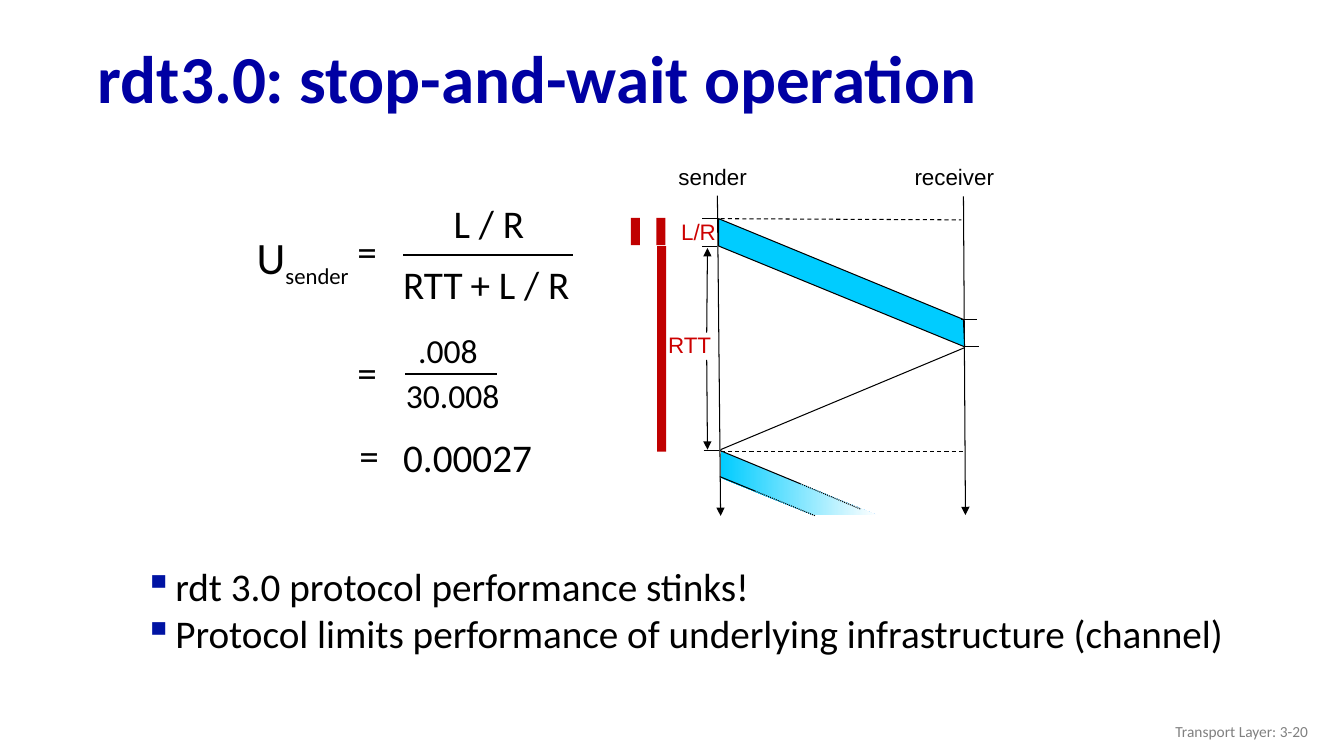
from pptx import Presentation, util as u
from pptx.dml.color import RGBColor
from pptx.enum import dml, shapes, text
from pptx.oxml import ns, xmlchemy

NAVY = RGBColor(0x00, 0x00, 0xA3)
BULLET_BLUE = RGBColor(0x00, 0x13, 0xA3)
BLACK = RGBColor(0x00, 0x00, 0x00)
WHITE = RGBColor(0xFF, 0xFF, 0xFF)
GREY = RGBColor(0x80, 0x80, 0x80)
CYAN = RGBColor(0x00, 0xCC, 0xFF)
LABEL_RED = RGBColor(0xCC, 0x00, 0x00)
BAR_RED = RGBColor(0xC0, 0x00, 0x00)
LEFT, RIGHT = text.PP_ALIGN.LEFT, text.PP_ALIGN.RIGHT
DASH, DOTS = dml.MSO_LINE.DASH, dml.MSO_LINE.ROUND_DOT

deck = Presentation()
deck.slide_width, deck.slide_height = u.Cm(33.87), u.Cm(19.05)
page = deck.slides.add_slide(deck.slide_layouts[5])


def add_line(x1, y1, x2, y2, weight=0.75, dash=None, arrow=False):
    """Draw a black line in cm, with an optional arrowhead at its end."""
    line = page.shapes.add_connector(
        shapes.MSO_CONNECTOR.STRAIGHT, *map(u.Cm, (x1, y1, x2, y2)))
    line.line.color.rgb = BLACK
    line.line.width = u.Pt(weight)
    if dash:
        line.line.dash_style = dash
    if arrow:
        head = xmlchemy.OxmlElement("a:tailEnd")
        head.set("type", "triangle")
        line.line._get_or_add_ln().append(head)
    line._element.spPr.append(xmlchemy.OxmlElement("a:effectLst"))


def add_text(place, lines, size, font="Calibri", color=BLACK, align=LEFT, wrap=True):
    """Add a text box at a place in cm, with one paragraph per line."""
    box = page.shapes.add_textbox(*map(u.Cm, place))
    box.text_frame.text = "\n".join(lines)
    box.text_frame.word_wrap = wrap
    for para in box.text_frame.paragraphs:
        para.alignment = align
        for span in para.runs:
            for name, value in {"size": u.Pt(size), "name": font}.items():
                setattr(span.font, name, value)
            span.font.color.rgb = color
    return box


# Title
title = page.shapes.title
for name, value in {"left": 2.21, "top": 0.81, "width": 30.84, "height": 2.49}.items():
    setattr(title, name, u.Cm(value))
title.text_frame.text = "rdt3.0: stop-and-wait operation"
title.text_frame.vertical_anchor = text.MSO_ANCHOR.MIDDLE
title_para = title.text_frame.paragraphs[0]
title_para.alignment = LEFT
title_para.line_spacing = 0.9
for name, value in {"size": u.Pt(48), "name": "Calibri", "bold": True}.items():
    setattr(title_para.runs[0].font, name, value)
title_para.runs[0].font.color.rgb = NAVY

# Time axes, exchange lines and marks
add_line(18.08, 4.93, 18.16, 13, arrow=True)
add_line(24.28, 4.95, 24.33, 12.98, arrow=True)
add_line(18.16, 5.51, 24.23, 5.54, dash=DASH)
add_line(18.16, 11.38, 24.26, 11.38, dash=DASH)
add_line(18.16, 11.33, 24.31, 8.76)

# First packet and the fading second one
packets = [
    [(18.11, 5.51), (24.28, 8.05), (24.31, 8.74), (18.11, 6.2)],
    [(18.16, 11.38), (22.1, 12.98), (20.5, 12.98), (18.16, 12.04)],
]
bands = []
for corners in packets:
    points = [(u.Cm(x), u.Cm(y)) for x, y in corners]
    builder = page.shapes.build_freeform(*points[0])
    builder.add_line_segments(points[1:], close=True)
    band = builder.convert_to_shape()
    band.shadow.inherit = False
    bands.append(band)
first, second = bands
first.fill.solid()
first.fill.fore_color.rgb = CYAN
first.line.color.rgb = BLACK
first.line.width = u.Pt(0.75)
second.fill.gradient()
second.fill.gradient_angle = 0
for stop, color in zip(second.fill.gradient_stops, (CYAN, WHITE)):
    stop.color.rgb = color
second.line.fill.background()

for x1, x2, y in [(17.7, 18.06, 5.51), (17.7, 18.06, 6.2), (17.73, 18.11, 11.35),
                  (24.23, 24.61, 8.05), (24.31, 24.66, 8.74)]:
    add_line(x1, y, x2, y)
for start, middle, end in [((18.14, 11.35), (20.17, 12.19), (21.69, 12.83)),
                           ((18.14, 12.01), (19.02, 12.37), (20.55, 13))]:
    add_line(*start, *middle)
    add_line(*middle, *end, dash=DOTS)

# Diagram labels
for place, label in [((16.61, 3.99, 2.46, 0.97), "sender"),
                     ((22.68, 3.99, 2.62, 0.97), "receiver")]:
    add_text(place, [label], 16, "Arial", align=RIGHT)
for place, label in [((15.9, 8.23, 2.4, 0.94), "RTT"),
                     ((15.93, 5.38, 2.36, 0.94), "L/R")]:
    box = add_text(place, [label], 16, "Arial", LABEL_RED, RIGHT)
    if label == "RTT":
        box.text_frame.margin_right = u.Cm(0.38)
add_line(17.81, 9.07, 17.83, 11.33, arrow=True)
add_line(17.81, 8.38, 17.83, 6.25, arrow=True)

# Red duration bars
for x, y, height in [(16.56, 6.2, 5.18), (16.54, 5.49, 0.69), (15.9, 5.49, 0.69)]:
    bar = page.shapes.add_shape(
        shapes.MSO_SHAPE.RECTANGLE, *map(u.Cm, (x, y, 0.23, height)))
    bar.shadow.inherit = False
    bar.fill.solid()
    bar.fill.fore_color.rgb = BAR_RED
    bar.line.fill.background()

# Utilization formula
utilization = add_text((6.22, 5.66, 3.1, 1.63), ["U"], 32, wrap=False)
subscript = utilization.text_frame.paragraphs[0].add_run()
subscript.text = "sender"
for name, value in {"size": u.Pt(28), "name": "Calibri"}.items():
    setattr(subscript.font, name, value)
subscript.font.color.rgb = BLACK
subscript._r.get_or_add_rPr().set("baseline", "-25000")

for x, y, width, term, size in [
    (8.76, 5.61, 1.02, "=", 28),
    (11.18, 4.9, 2.31, "L / R", 28),
    (9.91, 6.43, 2.03, "RTT", 28),
    (11.61, 6.43, 3.05, "+ L / R", 28),
    (8.76, 8.64, 1.02, "=", 28),
    (10.29, 8.18, 2.03, ".008", 24),
    (9.98, 9.32, 2.9, "30.008", 24),
    (8.81, 10.74, 1.02, "=", 28),
    (9.91, 10.8, 3.81, "0.00027", 28),
]:
    add_text((x, y, width, 1.45 if size == 28 else 1.27), [term], size, wrap=False)
add_line(10.16, 6.43, 14.45, 6.43, weight=1.75)
add_line(10.21, 9.42, 12.52, 9.42, weight=1.5)

# Conclusions
conclusions = add_text((3.38, 14.05, 28.32, 3.43), [
    "rdt 3.0 protocol performance stinks!",
    "Protocol limits performance of underlying infrastructure (channel)",
], 28)
for para in conclusions.text_frame.paragraphs:
    props = para._p.get_or_add_pPr()
    props.set("marL", str(u.Cm(0.79)))
    props.set("indent", str(-u.Cm(0.79)))
    bullet_color = xmlchemy.OxmlElement("a:buClr")
    rgb = xmlchemy.OxmlElement("a:srgbClr")
    rgb.set("val", str(BULLET_BLUE))
    bullet_color.append(rgb)
    bullet = xmlchemy.OxmlElement("a:buChar")
    bullet.set("char", "▪")
    props.extend([bullet_color, bullet])

footer = add_text((25.6, 17.91, 7.62, 1.02), ["Transport Layer: 3-20"], 11,
                  color=GREY, align=RIGHT)
footer.text_frame.vertical_anchor = text.MSO_ANCHOR.MIDDLE

deck.save("out.pptx")
